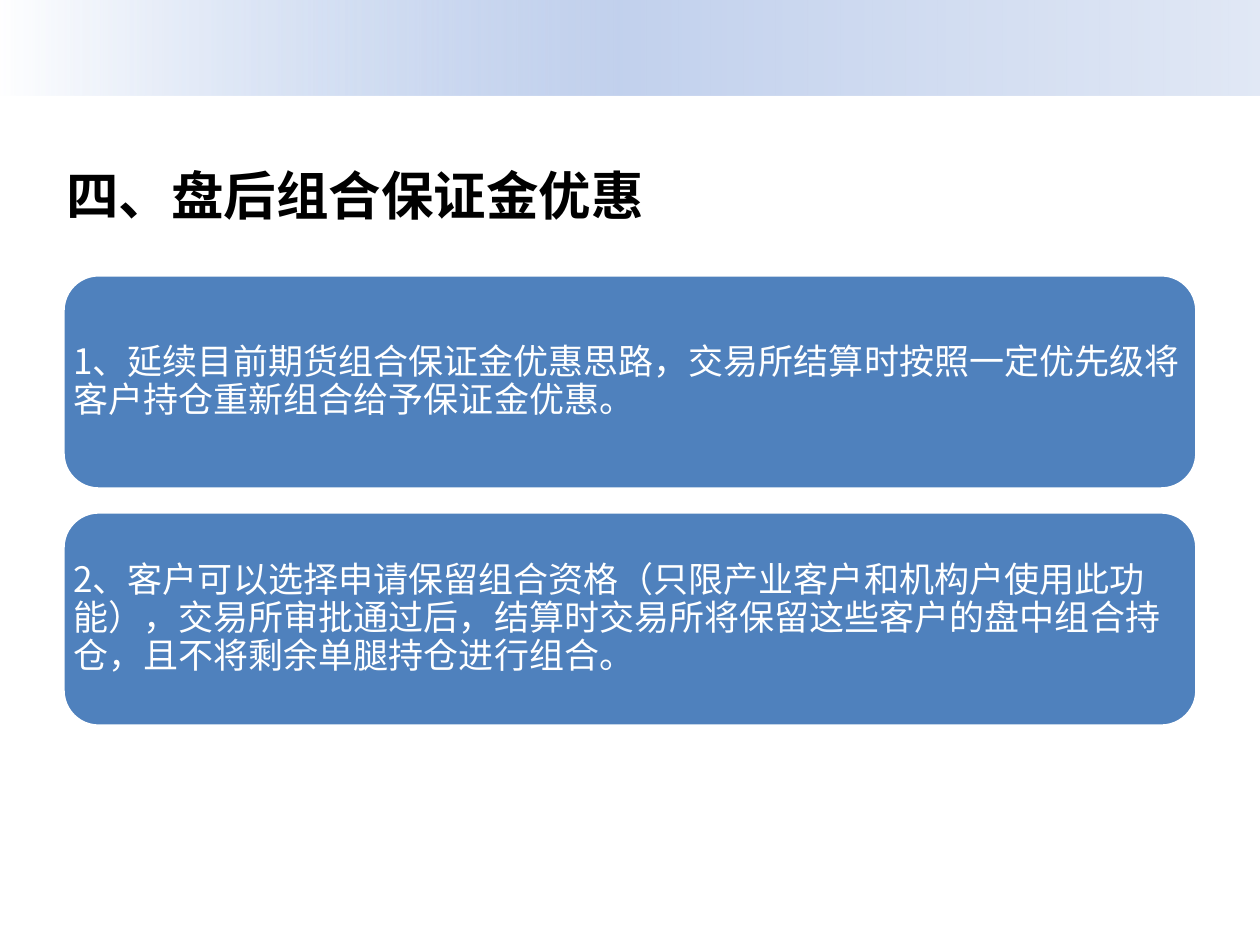
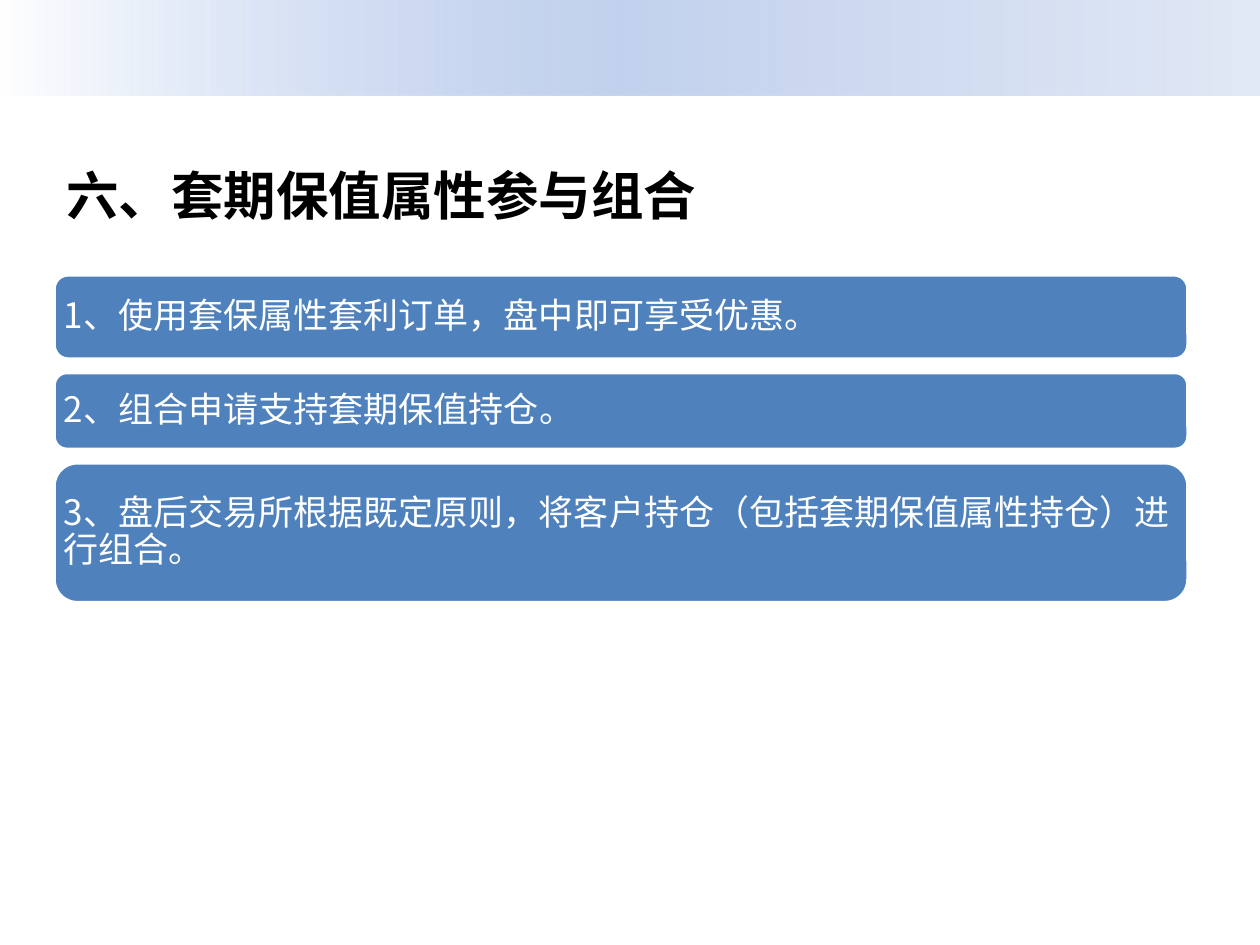
from dataclasses import dataclass

from lxml import etree
from pptx import Presentation
from pptx.dml.color import RGBColor
from pptx.enum.shapes import MSO_SHAPE
from pptx.enum.text import MSO_ANCHOR, PP_ALIGN
from pptx.oxml.ns import qn
from pptx.slide import Slide
from pptx.util import Cm, Pt

RECTANGLE = MSO_SHAPE.RECTANGLE
ROUNDED = MSO_SHAPE.ROUNDED_RECTANGLE
MIDDLE = MSO_ANCHOR.MIDDLE
LEFT = PP_ALIGN.LEFT

FONT = "Noto Sans CJK JP"
COLORS = {
    "band_start": "9AB5E4",
    "band_middle": "C2D1ED",
    "band_end": "E1E8F5",
    "title": "000000",
    "card": "4F81BD",
    "card_text": "FFFFFF",
    "card_border": "FFFFFF",
}
BAND_STOPS = [(0, "band_start", 0), (50, "band_middle", 100), (100, "band_end", 100)]

SLIDE_WIDTH, SLIDE_HEIGHT = 25.4, 19.05
BAND_HEIGHT = 1.93
CONTENT_WIDTH = 22.86
TITLE_LEFT, TITLE_TOP, TITLE_HEIGHT = 1.09, 2.34, 3.18
CARDS_TOP = 5.54
CARD_PADDING = 0.2
CORNER_INSET = 0.05


@dataclass(frozen=True)
class Card:
    text: str
    height: float


@dataclass(frozen=True)
class Topic:
    title: str
    left: float
    gap: float
    cards: tuple[Card, ...]


TOPICS = (
    Topic("四、盘后组合保证金优惠", 1.27, 0.46, (
        Card("1、延续目前期货组合保证金优惠思路，交易所结算时按照一定优先级将客户持仓重新组合给予保证金优惠。", 4.32),
        Card("2、客户可以选择申请保留组合资格（只限产业客户和机构户使用此功能），交易所审批通过后，"
             "结算时交易所将保留这些客户的盘中组合持仓，且不将剩余单腿持仓进行组合。", 4.32),
    )),
    Topic("六、套期保值属性参与组合", 1.09, 0.27, (
        Card("1、使用套保属性套利订单，盘中即可享受优惠。", 1.7),
        Card("2、组合申请支持套期保值持仓。", 1.55),
        Card("3、盘后交易所根据既定原则，将客户持仓（包括套期保值属性持仓）进行组合。", 2.82),
    )),
)


def color(name: str) -> RGBColor:
    return RGBColor.from_string(COLORS[name])


def write(frame, text: str, size: int, color_name: str, bold: bool = False):
    frame.word_wrap = True
    frame.vertical_anchor = MIDDLE
    paragraph = frame.paragraphs[0]
    paragraph.text = text
    paragraph.alignment = LEFT
    font = paragraph.font
    font.size = Pt(size)
    font.bold = bold
    font.name = FONT
    font.color.rgb = color(color_name)
    defaults = paragraph._p.pPr.find(qn("a:defRPr"))
    etree.SubElement(defaults, qn("a:ea"), typeface=FONT)
    return paragraph


def draw_band(slide: Slide) -> None:
    band = slide.shapes.add_shape(RECTANGLE, 0, 0, Cm(SLIDE_WIDTH), Cm(BAND_HEIGHT))
    band.shadow.inherit = False
    band.line.fill.background()
    band.fill.gradient()
    band.fill.gradient_angle = 0
    stops = band._element.spPr.find(".//" + qn("a:gsLst"))
    for stop in list(stops):
        stops.remove(stop)
    for position, name, opacity in BAND_STOPS:
        stop = etree.SubElement(stops, qn("a:gs"), pos=str(position * 1000))
        shade = etree.SubElement(stop, qn("a:srgbClr"), val=COLORS[name])
        etree.SubElement(shade, qn("a:alpha"), val=str(opacity * 1000))


def draw_title(slide: Slide, text: str) -> None:
    title = slide.shapes.add_textbox(
        Cm(TITLE_LEFT), Cm(TITLE_TOP), Cm(CONTENT_WIDTH), Cm(TITLE_HEIGHT))
    write(title.text_frame, text, 30, "title", bold=True)


def draw_card(slide: Slide, card: Card, left: float, top: float) -> None:
    panel = slide.shapes.add_shape(
        ROUNDED, Cm(left), Cm(top), Cm(CONTENT_WIDTH), Cm(card.height))
    panel.shadow.inherit = False
    panel.fill.solid()
    panel.fill.fore_color.rgb = color("card")
    panel.line.color.rgb = color("card_border")
    panel.line.width = Pt(2)
    frame = panel.text_frame
    padding = Cm(max(0, CARD_PADDING - CORNER_INSET * card.height))
    frame.margin_left = frame.margin_right = padding
    frame.margin_top = frame.margin_bottom = padding
    paragraph = write(frame, card.text, 20, "card_text")
    paragraph.line_spacing = 0.9
    paragraph.space_after = Pt(8)


def draw_topic(slide: Slide, topic: Topic) -> None:
    draw_band(slide)
    draw_title(slide, topic.title)
    top = CARDS_TOP
    for card in topic.cards:
        draw_card(slide, card, topic.left, top)
        top += card.height + topic.gap


def main() -> None:
    deck = Presentation()
    deck.slide_width, deck.slide_height = Cm(SLIDE_WIDTH), Cm(SLIDE_HEIGHT)
    blank = deck.slide_layouts[6]
    for topic in TOPICS:
        draw_topic(deck.slides.add_slide(blank), topic)
    deck.save("out.pptx")


if __name__ == "__main__":
    main()
